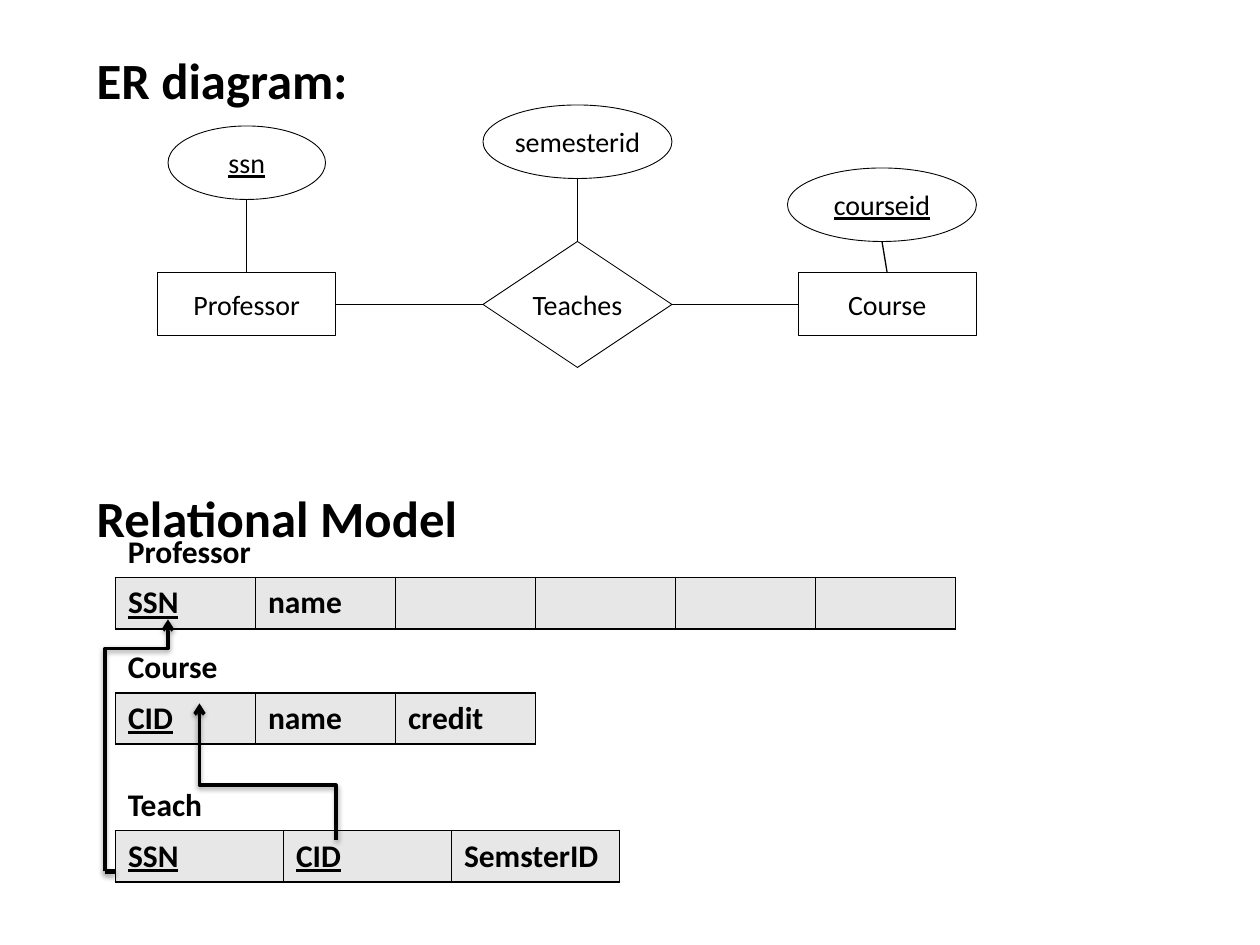
from dataclasses import dataclass

from lxml import etree
from pptx import Presentation
from pptx.dml.color import RGBColor
from pptx.enum.shapes import MSO_CONNECTOR, MSO_SHAPE
from pptx.enum.text import MSO_ANCHOR, MSO_AUTO_SIZE, PP_ALIGN
from pptx.oxml.ns import qn
from pptx.util import Pt

RECT, DIAMOND, OVAL = MSO_SHAPE.RECTANGLE, MSO_SHAPE.DIAMOND, MSO_SHAPE.OVAL
STRAIGHT, ELBOW = MSO_CONNECTOR.STRAIGHT, MSO_CONNECTOR.ELBOW
CENTER, MIDDLE = PP_ALIGN.CENTER, MSO_ANCHOR.MIDDLE
Point = tuple[float, float]


@dataclass(frozen=True)
class Theme:
    font: str = "Calibri"
    ink: str = "000000"
    paper: str = "FFFFFF"
    cell: str = "E7E7E7"
    heading: float = 29
    relation: float = 18
    node: float = 16


@dataclass(frozen=True)
class Node:
    text: str
    kind: int
    left: float
    top: float
    width: float
    height: float
    key: bool = False
    margins: tuple[float, float] | None = None  # side, top; given when unwrapped


@dataclass(frozen=True)
class Relation:
    name: str
    top: float
    label_width: float
    column_width: float
    columns: tuple[str, ...]
    keys: tuple[str, ...]


@dataclass(frozen=True)
class KeyArrow:
    start: Point
    end: Point
    turn: int  # 90 or 270 degrees
    bend: float  # share of the height at which the arrow turns


THEME = Theme()
TABLE_LEFT, ROW_HEIGHT, LABEL_HEIGHT = 66, 29.3, 29
HEADING_GAP = 216

NODES = [
    Node("Professor", RECT, 90, 156, 102, 36),
    Node("Teaches", DIAMOND, 276, 138, 108, 72, margins=(0, 0)),
    Node("ssn", OVAL, 96, 72, 90, 42, key=True),
    Node("Course", RECT, 456, 156, 102, 36),
    Node("semesterid", OVAL, 276, 60, 108, 42, margins=(0, 3.6)),
    Node("courseid", OVAL, 450, 96, 108, 42, key=True, margins=(0, 3.6)),
]
LINKS = [
    ((141, 156), (141, 114)),
    ((276, 174), (192, 174)),
    ((456, 174), (384, 174)),
    ((330, 102), (330, 138)),
    ((504, 138), (507, 156)),
]
RELATIONS = [
    Relation("Professor", 330, 85, 80, ("SSN", "name", "", "", "", ""), ("SSN",)),
    Relation("Course", 396, 66, 80, ("CID", "name", "credit"), ("CID",)),
    Relation("Teach", 474.7, 58, 96, ("SSN", "CID", "SemsterID"), ("SSN", "CID")),
]
KEY_ARROWS = [
    KeyArrow((60, 498), (96, 354), 90, 0.885),
    KeyArrow((192, 480), (114, 402), 270, 0.401),
]


def color(value: str) -> RGBColor:
    return RGBColor.from_string(value)


def add_span(para, text: str, size: float, bold=False, underline=False) -> None:
    span = para.add_run()
    span.text = text
    font = span.font
    font.name, font.size, font.bold = THEME.font, Pt(size), bold
    if underline:
        font.underline = True
    font.color.rgb = color(THEME.ink)


def add_color(parent, value: str):
    fill = etree.SubElement(parent, qn("a:solidFill"))
    etree.SubElement(fill, qn("a:srgbClr"), val=value)


def add_headings(page) -> None:
    title, body = page.placeholders
    title.element.getparent().remove(title.element)
    body.left, body.top, body.width, body.height = Pt(48), Pt(24), Pt(648), Pt(276)
    frame = body.text_frame
    frame.auto_size = MSO_AUTO_SIZE.NONE
    headings = [("ER diagram:", 0), ("Relational Model", HEADING_GAP)]
    for number, (text, gap) in enumerate(headings):
        para = frame.add_paragraph() if number else frame.paragraphs[0]
        para.space_before = Pt(gap)
        properties = para._p.get_or_add_pPr()
        properties.set("marL", "0")
        properties.set("indent", "0")
        etree.SubElement(properties, qn("a:buNone"))
        add_span(para, text, THEME.heading, bold=True)


def add_node(page, node: Node) -> None:
    box = page.shapes.add_shape(
        node.kind, Pt(node.left), Pt(node.top), Pt(node.width), Pt(node.height))
    box.shadow.inherit = False
    box.fill.solid()
    box.fill.fore_color.rgb = color(THEME.paper)
    box.line.color.rgb = color(THEME.ink)
    box.line.width = Pt(0.5)
    frame = box.text_frame
    frame.vertical_anchor = MIDDLE
    frame.word_wrap = node.margins is None
    if node.margins is not None:
        side, top = node.margins
        frame.margin_left = frame.margin_right = Pt(side)
        frame.margin_top = frame.margin_bottom = Pt(top)
    para = frame.paragraphs[0]
    para.alignment = CENTER
    add_span(para, node.text, THEME.node, underline=node.key)


def add_relation(page, relation: Relation) -> None:
    count = len(relation.columns)
    table = page.shapes.add_table(
        1, count, Pt(TABLE_LEFT), Pt(relation.top),
        Pt(count * relation.column_width), Pt(ROW_HEIGHT)).table
    table.first_row = table.horz_banding = False
    for cell, text in zip(table.rows[0].cells, relation.columns):
        # Borders come before the fill in the cell properties
        properties = cell._tc.get_or_add_tcPr()
        for side in ("a:lnL", "a:lnR", "a:lnT", "a:lnB"):
            border = etree.SubElement(properties, qn(side), w=str(Pt(1)))
            add_color(border, THEME.ink)
        cell.fill.solid()
        cell.fill.fore_color.rgb = color(THEME.cell)
        if text:
            add_span(cell.text_frame.paragraphs[0], text, THEME.relation,
                     bold=True, underline=text in relation.keys)
    label = page.shapes.add_textbox(
        Pt(TABLE_LEFT), Pt(relation.top - LABEL_HEIGHT - 0.7),
        Pt(relation.label_width), Pt(LABEL_HEIGHT))
    label.text_frame.word_wrap = False
    add_span(label.text_frame.paragraphs[0], relation.name, THEME.relation, bold=True)


def add_line(page, start: Point, end: Point, width: float, kind=STRAIGHT,
             shadow: tuple[float, int] | None = None):
    line = page.shapes.add_connector(kind, *map(Pt, start), *map(Pt, end))
    line.line.color.rgb = color(THEME.ink)
    line.line.width = Pt(width)
    effects = etree.SubElement(line._element.spPr, qn("a:effectLst"))
    if shadow:
        distance, opacity = shadow
        outer = etree.SubElement(
            effects, qn("a:outerShdw"), blurRad=str(Pt(3.1)),
            dist=str(Pt(distance)), dir="5400000", rotWithShape="0")
        shade = etree.SubElement(outer, qn("a:srgbClr"), val=THEME.ink)
        etree.SubElement(shade, qn("a:alpha"), val=str(opacity * 1000))
    return line


def add_key_arrow(page, arrow: KeyArrow) -> None:
    # Turn the ends back about the centre, so that the rotation restores them
    (x1, y1), (x2, y2) = arrow.start, arrow.end
    middle_x, middle_y = (x1 + x2) / 2, (y1 + y2) / 2
    sign = 1 if arrow.turn == 90 else -1
    across, down = sign * (y1 - middle_y), sign * (middle_x - x1)
    line = add_line(page, (middle_x + across, middle_y + down),
                    (middle_x - across, middle_y - down), 2, ELBOW, (1.6, 38))
    properties = line._element.spPr
    properties.find(qn("a:xfrm")).set("rot", str(arrow.turn * 60000))
    guides = properties.find(qn("a:prstGeom")).find(qn("a:avLst"))
    etree.SubElement(guides, qn("a:gd"), name="adj1",
                     fmla=f"val {round(arrow.bend * 100000)}")
    etree.SubElement(properties.find(qn("a:ln")), qn("a:tailEnd"), type="arrow")


def main() -> None:
    deck = Presentation()
    deck.slide_width, deck.slide_height = Pt(720), Pt(540)
    page = deck.slides.add_slide(deck.slide_layouts[1])
    add_headings(page)
    # Relational model tables
    for relation in RELATIONS:
        add_relation(page, relation)
    # ER diagram
    for node in NODES:
        add_node(page, node)
    for start, end in LINKS:
        add_line(page, start, end, 0.75)
    # Foreign keys
    for arrow in KEY_ARROWS:
        add_key_arrow(page, arrow)
    add_line(page, (66, 498), (60, 498), 3, shadow=(1.8, 35))
    deck.save("out.pptx")


if __name__ == "__main__":
    main()
